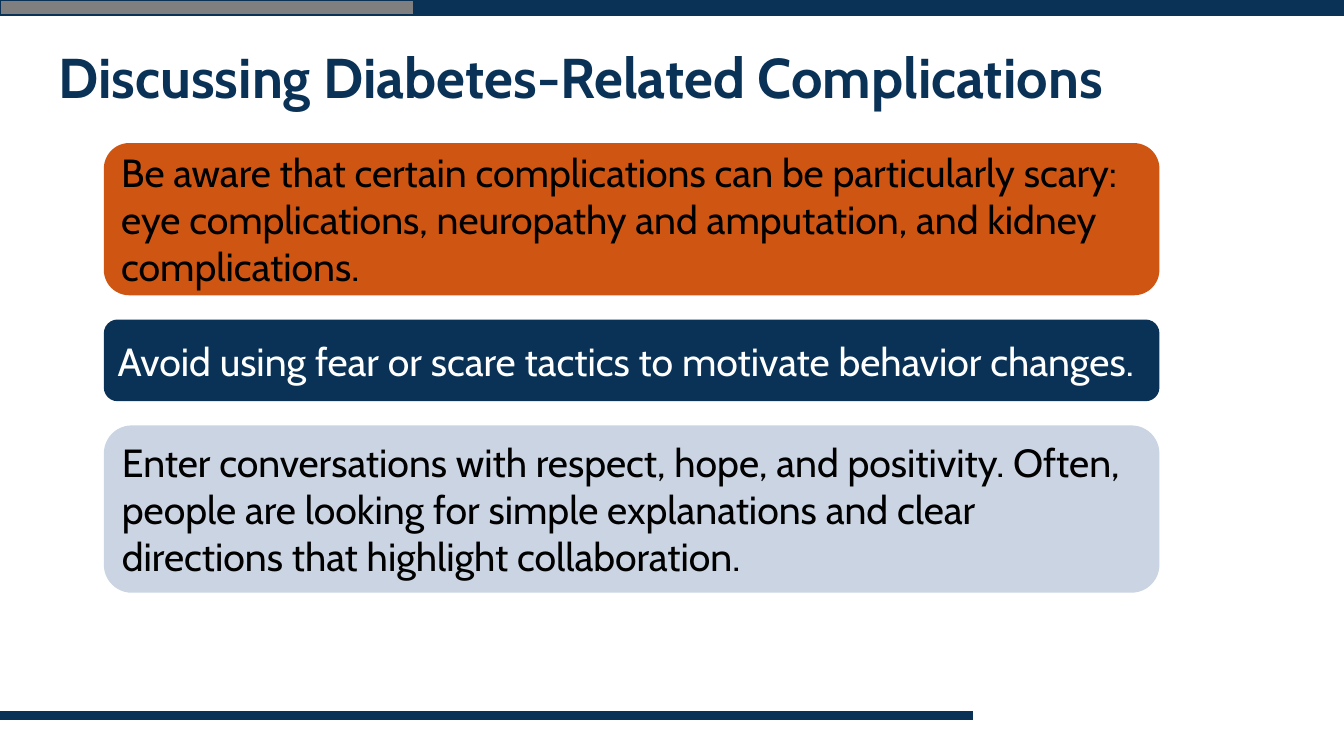
from dataclasses import dataclass

import pptx
import pptx.dml.color
import pptx.enum.shapes
import pptx.enum.text
import pptx.oxml.ns
import pptx.util
from lxml import etree


@dataclass(frozen=True)
class Theme:
    font: str = "Cabin"
    navy: str = "093256"
    grey: str = "7F7F7F"
    orange: str = "CF5513"
    pale: str = "CBD4E2"
    black: str = "000000"
    white: str = "FFFFFF"
    title_size: int = 40
    card_size: int = 28
    inset: float = 0.1
    corner: float = 0.167


@dataclass(frozen=True)
class Box:
    left: float
    top: float
    width: float
    height: float

    def share(self, left, top, width, height):
        return Box(
            self.left + self.width * left / 100,
            self.top + self.height * top / 100,
            self.width * width / 100,
            self.height * height / 100,
        )

    def lengths(self):
        return [round(value) for value in (self.left, self.top, self.width, self.height)]


THEME = Theme()
CARD_GAP = 5.38
CARDS = [
    (33.86, THEME.orange, THEME.black,
     "Be aware that certain complications can be particularly scary: eye complications, "
     "neuropathy and amputation, and kidney complications."),
    (18.16, THEME.navy, THEME.white,
     "Avoid using fear or scare tactics to motivate behavior changes."),
    (37.22, THEME.pale, THEME.black,
     "Enter conversations with respect, hope, and positivity. Often, people are looking for "
     "simple explanations and clear directions that highlight collaboration."),
]


def rgb(color):
    return pptx.dml.color.RGBColor.from_string(color)


def write_text(shape, text, size, color, anchor, bold=False, line_spacing=1.0):
    frame = shape.text_frame
    frame.word_wrap = True
    frame.auto_size = pptx.enum.text.MSO_AUTO_SIZE.NONE
    frame.vertical_anchor = anchor
    inset = pptx.util.Inches(THEME.inset)
    frame.margin_left = frame.margin_right = inset
    frame.margin_top = frame.margin_bottom = inset
    frame.text = text
    paragraph = frame.paragraphs[0]
    paragraph.alignment = pptx.enum.text.PP_ALIGN.LEFT
    paragraph.line_spacing = line_spacing
    paragraph.space_before = pptx.util.Pt(0)
    font = paragraph.runs[0].font
    font.name = THEME.font
    font.size = pptx.util.Pt(size)
    font.bold = bold
    font.color.rgb = rgb(color)


def add_block(slide, box, kind, fill, line=None):
    shape = slide.shapes.add_shape(kind, *box.lengths())
    shape.shadow.inherit = False
    shape.fill.solid()
    shape.fill.fore_color.rgb = rgb(fill)
    if line:
        shape.line.color.rgb = rgb(line)
        shape.line.width = pptx.util.Pt(1)
    else:
        shape.line.fill.background()
    return shape


def add_header_band(slide, box):
    rectangle = pptx.enum.shapes.MSO_SHAPE.RECTANGLE
    add_block(slide, box.share(30.38, 0, 69.62, 100), rectangle, THEME.navy, THEME.navy)
    add_block(slide, box.share(0, 0, 30.76, 100), rectangle, THEME.grey, THEME.navy)


def add_footer_rule(slide, box):
    left, top, width, height = box.lengths()
    rule = slide.shapes.add_connector(
        pptx.enum.shapes.MSO_CONNECTOR.STRAIGHT, left, top, left + width, top + height
    )
    rule.line.color.rgb = rgb(THEME.navy)
    rule.line.width = pptx.util.Pt(6)
    properties = rule.element.find(pptx.oxml.ns.qn("p:spPr"))
    etree.SubElement(properties, pptx.oxml.ns.qn("a:effectLst"))


def add_title(slide, box, text):
    title = slide.shapes.title
    title.left, title.top, title.width, title.height = box.lengths()
    write_text(title, text, THEME.title_size, THEME.navy,
               pptx.enum.text.MSO_ANCHOR.TOP, bold=True, line_spacing=0.9)


def add_cards(slide, box, cards):
    top = 0
    for height, fill, color, text in cards:
        card = add_block(slide, box.share(0, top, 100, height),
                         pptx.enum.shapes.MSO_SHAPE.ROUNDED_RECTANGLE, fill)
        card.adjustments[0] = THEME.corner
        write_text(card, text, THEME.card_size, color, pptx.enum.text.MSO_ANCHOR.MIDDLE)
        top += height + CARD_GAP


def main():
    presentation = pptx.Presentation()
    presentation.slide_width = pptx.util.Inches(13.33)
    presentation.slide_height = pptx.util.Inches(7.5)
    slide = presentation.slides.add_slide(presentation.slide_layouts.get_by_name("Title Only"))
    page = Box(0, 0, presentation.slide_width, presentation.slide_height)
    add_footer_rule(slide, page.share(0, 94.67, 72.39, 0))
    add_header_band(slide, page.share(0, 0, 100, 2))
    add_title(slide, page.share(3.6, 5.33, 85.45, 10.8), "Discussing Diabetes-Related Complications")
    add_cards(slide, page.share(7.73, 18.93, 78.54, 59.47), CARDS)
    presentation.save("out.pptx")


if __name__ == "__main__":
    main()
